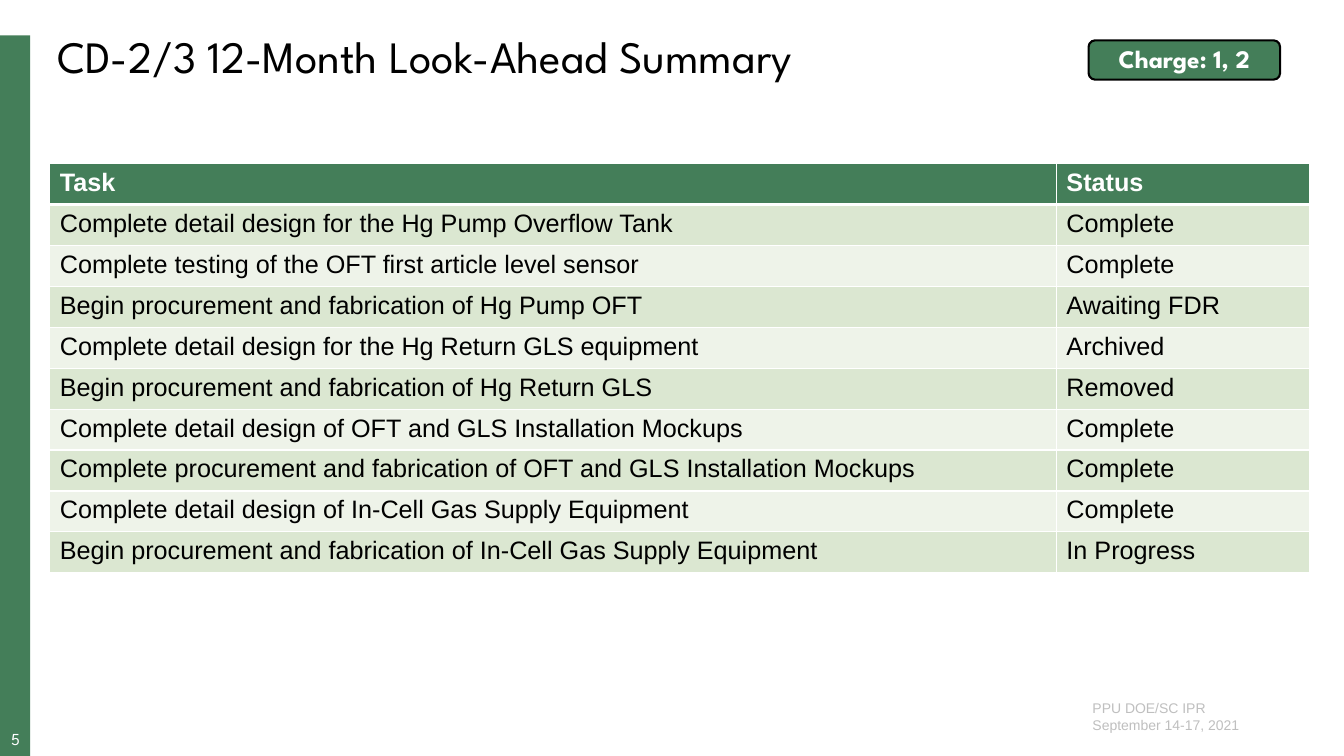
from dataclasses import dataclass

from lxml import etree
from pptx import Presentation
from pptx.dml.color import RGBColor
from pptx.enum import shapes, text
from pptx.oxml import ns
from pptx.util import Pt

TITLE = "CD-2/3 12-Month Look-Ahead Summary"
CHARGE = "Charge: 1, 2"
FOOTER = "PPU DOE/SC IPR\nSeptember 14-17, 2021"
PAGE_NUMBER = "5"
TASKS = [
    ("Task", "Status"),
    ("Complete detail design for the Hg Pump Overflow Tank", "Complete"),
    ("Complete testing of the OFT first article level sensor", "Complete"),
    ("Begin procurement and fabrication of Hg Pump OFT", "Awaiting FDR"),
    ("Complete detail design for the Hg Return GLS equipment", "Archived"),
    ("Begin procurement and fabrication of Hg Return GLS", "Removed"),
    ("Complete detail design of OFT and GLS Installation Mockups", "Complete"),
    ("Complete procurement and fabrication of OFT and GLS Installation Mockups", "Complete"),
    ("Complete detail design of In-Cell Gas Supply Equipment", "Complete"),
    ("Begin procurement and fabrication of In-Cell Gas Supply Equipment", "In Progress"),
]


@dataclass(frozen=True)
class Theme:
    heading: str = "League Spartan"
    body: str = "Arial"
    green: str = "447E59"
    bands: tuple = ("DBE7D1", "EEF3E9")
    white: str = "FFFFFF"
    black: str = "000000"
    grey: str = "BFBFBF"
    title_size: int = 32
    table_size: int = 18
    number_size: int = 12
    footer_size: int = 10


THEME = Theme()
SLIDE_W, SLIDE_H = 960, 540
BAR_TOP, BAR_W = 25.2, 21.6
TABLE_LEFT, TABLE_TOP = 35.6, 116.9
COLUMN_WIDTHS = (719, 181)
ROW_H = 29.23
RULE, HEADER_RULE = 1, 3


def write(frame, words, font, size, color, bold=False, align=None, spacing=None):
    frame.text = words
    for paragraph in frame.paragraphs:
        paragraph.alignment = align
        paragraph.line_spacing = spacing
        for run in paragraph.runs:
            run.font.name = font
            run.font.size = Pt(size)
            run.font.bold = bold
            run.font.color.rgb = RGBColor.from_string(color)


def set_margins(frame, margin):
    frame.margin_left = frame.margin_right = Pt(margin)
    frame.margin_top = frame.margin_bottom = Pt(margin)


def add_label(slide, box, *args, margin=None, **kwargs):
    frame = slide.shapes.add_textbox(*map(Pt, box)).text_frame
    frame.word_wrap = True
    if margin is not None:
        set_margins(frame, margin)
    write(frame, *args, **kwargs)


def add_green_shape(slide, kind, box):
    shape = slide.shapes.add_shape(kind, *map(Pt, box))
    shape.shadow.inherit = False
    shape.fill.solid()
    shape.fill.fore_color.rgb = RGBColor.from_string(THEME.green)
    shape.line.fill.background()
    return shape


def set_borders(cell, bottom):
    """Draw white rules on all four sides; they must precede the cell's fill."""
    properties = cell._tc.get_or_add_tcPr()
    for side, width in (("L", RULE), ("R", RULE), ("T", RULE), ("B", bottom)):
        rule = etree.SubElement(properties, ns.qn(f"a:ln{side}"), w=str(Pt(width)))
        fill = etree.SubElement(rule, ns.qn("a:solidFill"))
        etree.SubElement(fill, ns.qn("a:srgbClr"), val=THEME.white)


def add_task_table(slide):
    table = slide.shapes.add_table(
        len(TASKS), len(COLUMN_WIDTHS), Pt(TABLE_LEFT), Pt(TABLE_TOP),
        Pt(sum(COLUMN_WIDTHS)), Pt(ROW_H * len(TASKS))).table
    for column, width in zip(table.columns, COLUMN_WIDTHS):
        column.width = Pt(width)
    for r, task in enumerate(TASKS):
        header = r == 0
        table.rows[r].height = Pt(ROW_H)
        for c, words in enumerate(task):
            cell = table.cell(r, c)
            set_borders(cell, HEADER_RULE if header else RULE)
            cell.fill.solid()
            cell.fill.fore_color.rgb = RGBColor.from_string(
                THEME.green if header else THEME.bands[(r - 1) % 2])
            write(cell.text_frame, words, THEME.body, THEME.table_size,
                  THEME.white if header else THEME.black, bold=header)


def add_charge_badge(slide):
    badge = add_green_shape(slide, shapes.MSO_SHAPE.ROUNDED_RECTANGLE,
                            (777.6, 28.8, 136.8, 28.1))
    badge.line.color.rgb = RGBColor.from_string(THEME.black)
    badge.line.width = Pt(1.5)
    frame = badge.text_frame
    set_margins(frame, 3.6)
    frame.vertical_anchor = text.MSO_ANCHOR.MIDDLE
    write(frame, CHARGE, THEME.heading, THEME.table_size, THEME.white,
          bold=True, align=text.PP_ALIGN.CENTER, spacing=0.9)


def main():
    deck = Presentation()
    deck.slide_width, deck.slide_height = Pt(SLIDE_W), Pt(SLIDE_H)
    slide = deck.slides.add_slide(deck.slide_layouts[6])

    add_green_shape(slide, shapes.MSO_SHAPE.RECTANGLE,
                    (0, BAR_TOP, BAR_W, SLIDE_H - BAR_TOP))
    add_label(slide, (0, 522, 22.3, 12.2), PAGE_NUMBER, THEME.heading,
              THEME.number_size, THEME.white, margin=0,
              align=text.PP_ALIGN.CENTER, spacing=0.9)
    add_label(slide, (773.3, 496.1, 160.6, 31.7), FOOTER, THEME.body,
              THEME.footer_size, THEME.grey)
    add_label(slide, (33.8, 21.6, 900, 42.5), TITLE, THEME.heading,
              THEME.title_size, THEME.black, spacing=0.9)
    add_task_table(slide)
    add_charge_badge(slide)
    deck.save("out.pptx")


if __name__ == "__main__":
    main()
